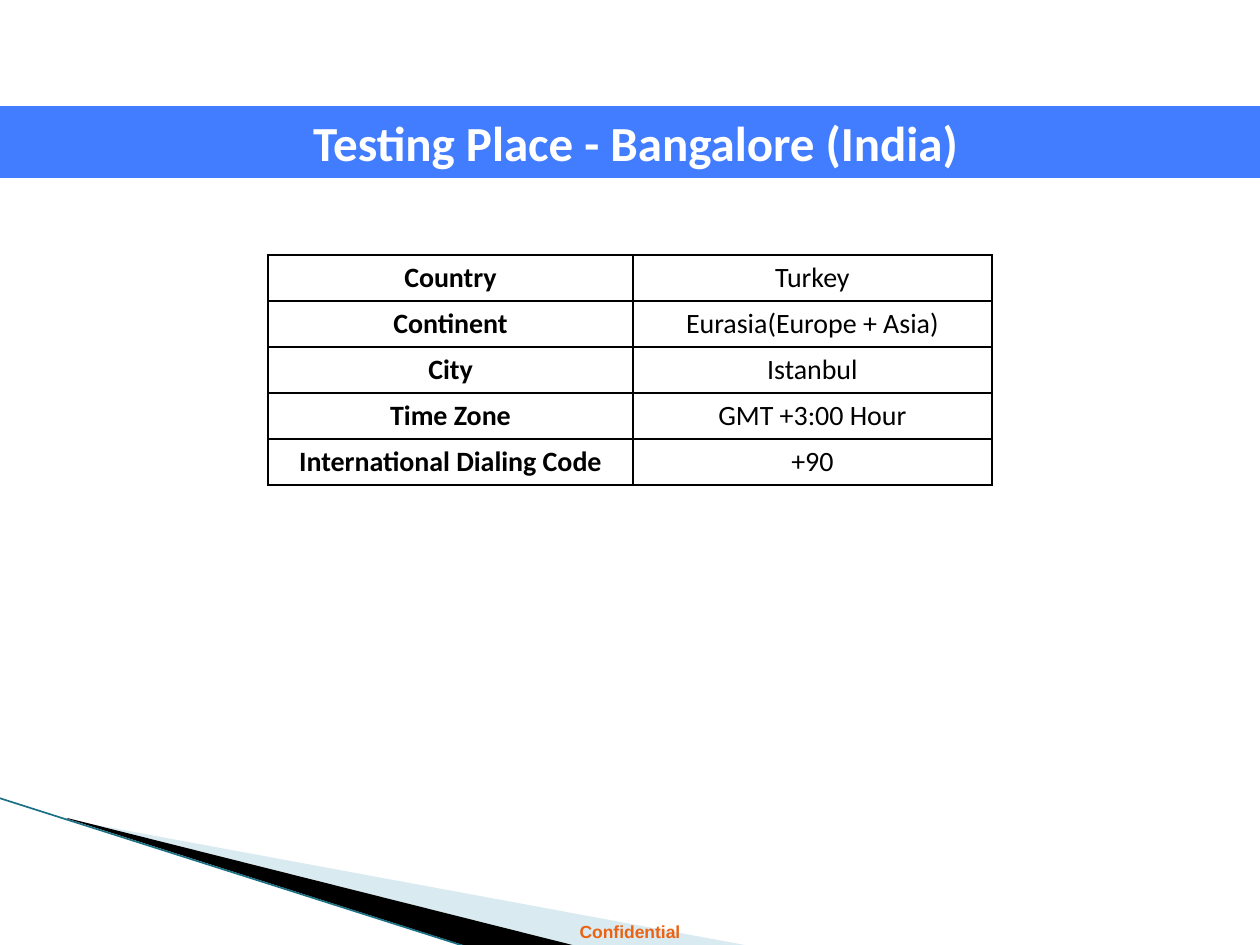
from lxml import etree
from pptx import Presentation
from pptx.dml.color import RGBColor
from pptx.enum.shapes import MSO_CONNECTOR, MSO_SHAPE
from pptx.enum.text import MSO_ANCHOR, PP_ALIGN
from pptx.oxml import parse_xml
from pptx.oxml.ns import nsdecls, qn
from pptx.util import Pt

PX = 914400 / 126
HEX = {"bar": "437DFF", "white": "FFFFFF", "black": "000000",
       "pale": "A0CBDC", "teal": "1B7083", "orange": "EB6312"}


def px(n):
    return round(n * PX)


def write(frame, text, size, color, bold=True, font="Calibri"):
    para = frame.paragraphs[0]
    para.alignment = PP_ALIGN.CENTER
    run = para.add_run()
    run.text = text
    run.font.name = font
    run.font.size = Pt(size)
    run.font.bold = bold
    run.font.color.rgb = RGBColor.from_string(HEX[color])


deck = Presentation()
deck.slide_width, deck.slide_height = px(1260), px(945)
slide = deck.slides.add_slide(deck.slide_layouts[6])
shapes = slide.shapes

# Corner wedges
wedges = [("pale", [(69, 820), (750, 946), (575, 946), (69, 819)]),
          ("black", [(67, 818), (576, 946), (469, 947), (68, 819)])]
for color, points in wedges:
    pen = shapes.build_freeform(*points[0], scale=PX)
    pen.add_line_segments(points[1:], close=True)
    wedge = pen.convert_to_shape()
    wedge.shadow.inherit = False
    wedge.fill.solid()
    wedge.fill.fore_color.rgb = RGBColor.from_string(HEX[color])
    wedge.line.fill.background()
    if color == "pale":
        tint = wedge.fill._xPr.find(".//" + qn("a:srgbClr"))
        etree.SubElement(tint, qn("a:alpha")).set("val", "40000")

# Corner line
edge = shapes.add_connector(MSO_CONNECTOR.STRAIGHT, px(-1), px(798), px(467), px(947))
edge.line.color.rgb = RGBColor.from_string(HEX["teal"])
edge.line.width = Pt(0.95)
etree.SubElement(edge._element.spPr, qn("a:effectLst"))

# Footer
foot = shapes.add_textbox(0, px(915), px(1260), px(34)).text_frame
foot.word_wrap = True
write(foot, "Confidential", 10, "orange", font="Arial")

# Title bar
bar = shapes.add_shape(MSO_SHAPE.RECTANGLE, 0, px(106), px(1260), px(72))
bar.shadow.inherit = False
bar.fill.solid()
bar.fill.fore_color.rgb = RGBColor.from_string(HEX["bar"])
bar.line.fill.background()
title = bar.text_frame
title.word_wrap = True
title.vertical_anchor = MSO_ANCHOR.MIDDLE
title.margin_left, title.margin_right = px(24), px(13)
write(title, "Testing Place - Bangalore (India)", 28, "white")

# Place facts
facts = [("Country", "Turkey"),
         ("Continent", "Eurasia(Europe + Asia)"),
         ("City", "Istanbul"),
         ("Time Zone", "GMT +3:00 Hour"),
         ("International Dialing Code", "+90")]
wide, high = (365, 359), 46
grid = shapes.add_table(len(facts), 2, px(268), px(255),
                        px(sum(wide)), px(high * len(facts))).table
grid.first_row = grid.horz_banding = False
for col, width in zip(grid.columns, wide):
    col.width = px(width)
for row, fact in zip(grid.rows, facts):
    row.height = px(high)
    for i, (cell, text) in enumerate(zip(row.cells, fact)):
        cell.vertical_anchor = MSO_ANCHOR.MIDDLE
        cell.margin_top = cell.margin_bottom = px(5)
        write(cell.text_frame, text, 16, "black", bold=i == 0)
        props = cell._tc.get_or_add_tcPr()
        for side in ("lnL", "lnR", "lnT", "lnB"):
            props.append(parse_xml(
                f'<a:{side} {nsdecls("a")} w="12700"><a:solidFill>'
                f'<a:srgbClr val="{HEX["black"]}"/></a:solidFill></a:{side}>'))
        cell.fill.background()

deck.save("out.pptx")
